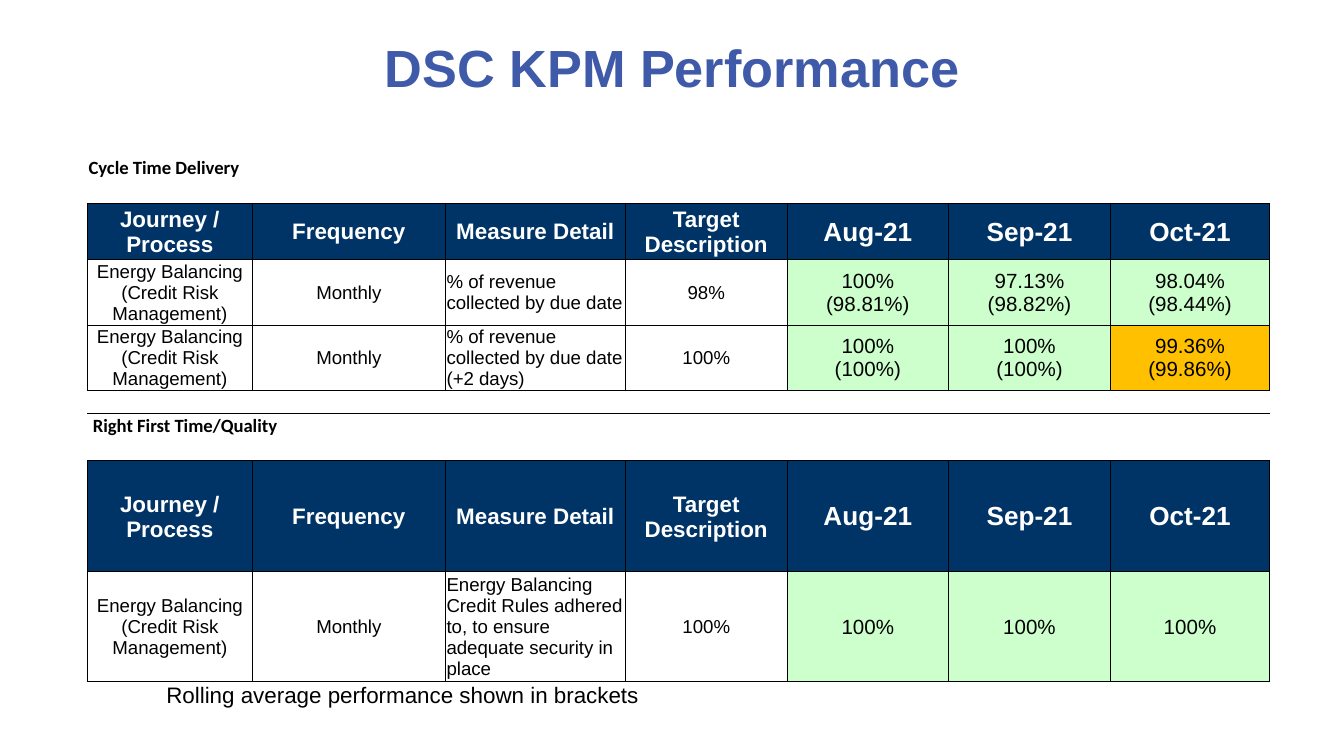
import pptx
import pptx.util
import pptx.dml.color
import pptx.enum.text
from lxml import etree

Pt = pptx.util.Pt
ALIGN = pptx.enum.text.PP_ALIGN
ANCHOR = pptx.enum.text.MSO_ANCHOR

TITLE = "DSC KPM Performance"
NOTE = "Rolling average performance shown in brackets"
NAVY, WHITE, BLACK = "003366", "FFFFFF", "000000"
GREEN, AMBER = "CCFFCC", "FFC000"

HEAD = ["Journey / Process", "Frequency", "Measure Detail", "Target Description",
        "Aug-21", "Sep-21", "Oct-21"]
TEAM = "Energy Balancing (Credit Risk Management)"
# Each row: kind, height, cell texts
ROWS = [
    ("label", 12.6, ["Cycle Time Delivery"]),
    ("gap", 12.6, []),
    ("head", 30, HEAD),
    ("data", 35.2, [TEAM, "Monthly", "% of revenue collected by due date", "98%",
                    "100%\n(98.81%)", "97.13%\n(98.82%)", "98.04%\n(98.44%)"]),
    ("data", 35, [TEAM, "Monthly", "% of revenue collected by due date (+2 days)",
                  "100%", "100%\n(100%)", "100%\n(100%)", "99.36%\n(99.86%)"]),
    ("gap", 12.5, []),
    ("label", 12.5, ["Right First Time/Quality"]),
    ("gap", 12.5, []),
    ("head", 59.4, HEAD),
    ("data", 58.6, [TEAM, "Monthly", "Energy Balancing Credit Rules adhered to, "
                    "to ensure adequate security in place", "100%",
                    "100%", "100%", "100%"]),
]
LATE = {(4, 6)}
WIDTHS = [88.4, 103.4, 96.4, 86.8, 86.4, 86.8, 85.2]
MONTH, DETAIL = 4, 2
LEFT, TOP = 46.8, 83.5
NS = "http://schemas.openxmlformats.org/drawingml/2006/main"
PLAIN = "{2D5ABB26-0587-4C30-8999-92F81FD0307C}"


def color(code):
    return pptx.dml.color.RGBColor.from_string(code)


def write(par, text, size, code, bold=False, face="Arial", align=ALIGN.LEFT):
    par.alignment = align
    run = par.add_run()
    run.text = text
    font = run.font
    font.name, font.size, font.bold = face, Pt(size), bold
    font.color.rgb = color(code)


def border(cell, sides):
    """Draw a thin black line on each side named by L, R, T or B."""
    props = cell._tc.get_or_add_tcPr()
    for side in sides:
        line = etree.SubElement(props, f"{{{NS}}}ln{side}", w=str(Pt(0.5)))
        fill = etree.SubElement(line, f"{{{NS}}}solidFill")
        etree.SubElement(fill, f"{{{NS}}}srgbClr", val=BLACK)


def ruled(row):
    return 0 <= row < len(ROWS) and ROWS[row][0] in ("head", "data")


def fill_cell(cell, row, col):
    kind, _, texts = ROWS[row]
    edges = "T" * ruled(row - 1) + "B" * ruled(row + 1)
    border(cell, "LRTB" if ruled(row) else edges)
    cell.margin_left = cell.margin_right = cell.margin_top = Pt(0.7)
    cell.margin_bottom = 0
    cell.vertical_anchor = ANCHOR.BOTTOM if kind == "label" else ANCHOR.MIDDLE
    par = cell.text_frame.paragraphs[0]
    if col >= len(texts):
        etree.SubElement(par._p, f"{{{NS}}}endParaRPr", sz="800")
        return
    if kind == "label":
        cell.margin_left = Pt(0.7 if row == 0 else 3)
        write(par, texts[col], 10, BLACK, True, "Calibri")
        return
    month = col >= MONTH
    head = kind == "head"
    if head:
        back, ink, size = NAVY, WHITE, 14 if month else 12
    else:
        back, ink, size = GREEN if month else WHITE, BLACK, 11 if month else 10
    if (row, col) in LATE:
        back = AMBER
    cell.fill.solid()
    cell.fill.fore_color.rgb = color(back)
    align = ALIGN.LEFT if col == DETAIL and not head else ALIGN.CENTER
    for i, text in enumerate(texts[col].split("\n")):
        if i:
            par = cell.text_frame.add_paragraph()
        write(par, text, size, ink, head, align=align)


def add_grid(slide):
    heights = [row[1] for row in ROWS]
    frame = slide.shapes.add_table(len(ROWS), len(WIDTHS), Pt(LEFT), Pt(TOP),
                                   Pt(sum(WIDTHS)), Pt(sum(heights)))
    table = frame.table
    table.first_row = table.horz_banding = False
    table._tbl.tblPr.find(f"{{{NS}}}tableStyleId").text = PLAIN
    for col, width in enumerate(WIDTHS):
        table.columns[col].width = Pt(width)
    for row, height in enumerate(heights):
        table.rows[row].height = Pt(height)
        for col in range(len(WIDTHS)):
            fill_cell(table.cell(row, col), row, col)
    table.cell(6, 0).merge(table.cell(6, 1))


def main():
    deck = pptx.Presentation()
    deck.slide_width, deck.slide_height = Pt(720), Pt(405)
    slide = deck.slides.add_slide(deck.slide_layouts[5])

    title = slide.shapes.title
    title.left, title.top, title.width, title.height = Pt(36), Pt(10.5), Pt(648), Pt(50.4)
    title.text_frame.vertical_anchor = ANCHOR.MIDDLE
    write(title.text_frame.paragraphs[0], TITLE, 28, "3E5AA8", True, align=ALIGN.CENTER)

    add_grid(slide)

    note = slide.shapes.add_textbox(Pt(82), Pt(361.5), Pt(549.4), Pt(21.8)).text_frame
    note.word_wrap = True
    note.auto_size = pptx.enum.text.MSO_AUTO_SIZE.SHAPE_TO_FIT_TEXT
    write(note.paragraphs[0], NOTE, 12, BLACK)

    deck.save("out.pptx")


if __name__ == "__main__":
    main()
